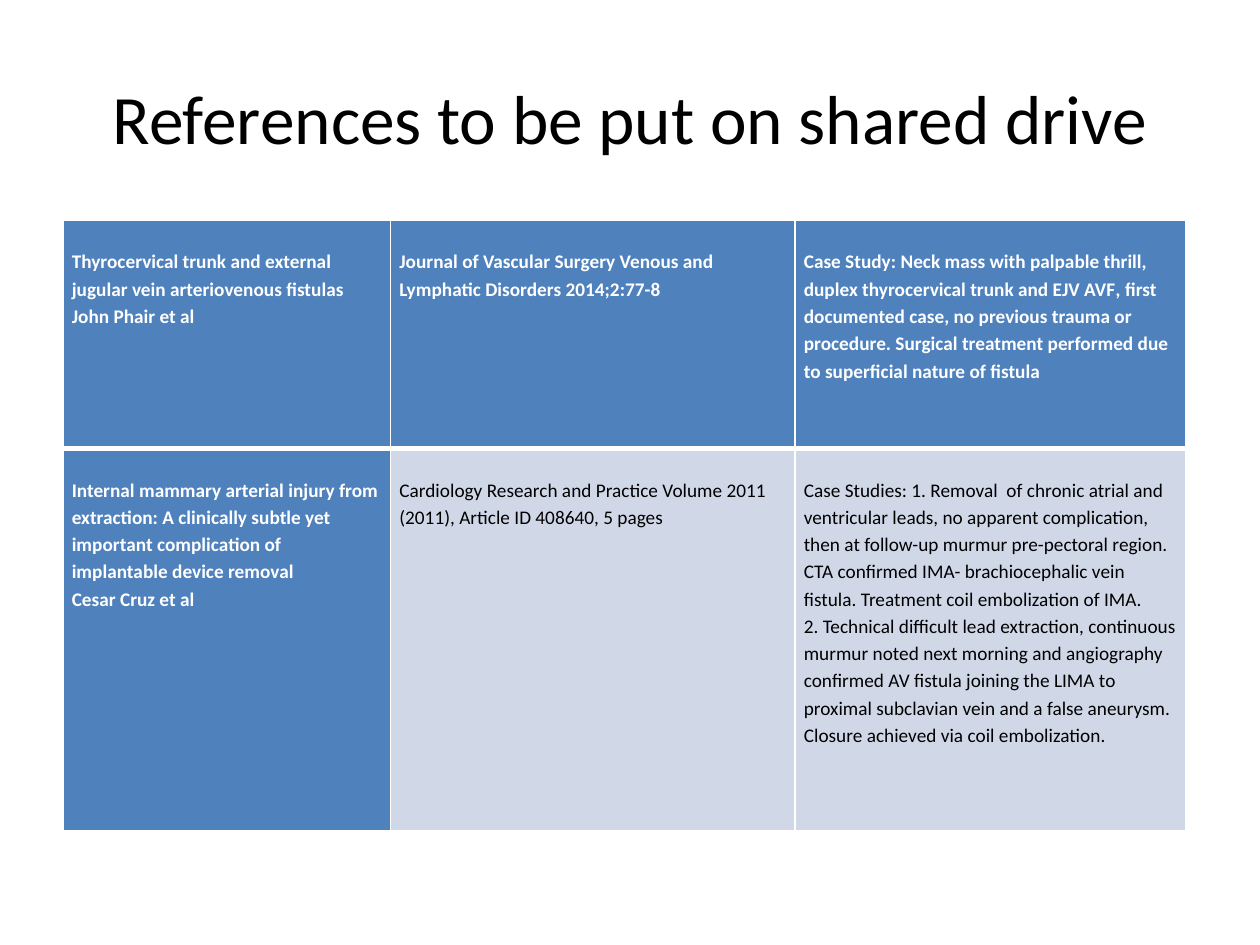
from dataclasses import dataclass

from lxml.etree import SubElement
from pptx import Presentation
from pptx.dml.color import RGBColor
from pptx.enum.text import MSO_ANCHOR, MSO_AUTO_SIZE, PP_ALIGN
from pptx.oxml.ns import qn
from pptx.util import Inches, Pt


@dataclass(frozen=True)
class Theme:
    font: str = "Calibri"
    title_size: float = 39.6
    cell_size: float = 11
    line_spacing: float = 1.15
    text: str = "000000"
    header_text: str = "FFFFFF"
    header_fill: str = "4F81BD"
    body_fill: str = "D0D8E8"
    border: str = "FFFFFF"
    thin_border: float = 1
    thick_border: float = 3


# Each cell is a list of paragraphs; a tuple holds (text, italic) runs
REFERENCES = [
    [
        ["Thyrocervical trunk and external jugular vein arteriovenous fistulas",
         "John Phair et al"],
        ["Journal of Vascular Surgery Venous and Lymphatic Disorders 2014;2:77-8"],
        [(("Case Study: Neck mass with palpable thrill, duplex thyrocervical trunk "
           "and EJV AVF", False),
          (", ", True),
          ("first documented case, no previous trauma or procedure. Surgical "
           "treatment performed due to superficial nature of fistula", False))],
    ],
    [
        ["Internal mammary arterial injury from extraction: A clinically subtle yet "
         "important complication of implantable device removal",
         "Cesar Cruz et al"],
        ["Cardiology Research and Practice Volume 2011 (2011), Article ID 408640, "
         "5 pages"],
        ["Case Studies: 1. Removal  of chronic atrial and ventricular leads, no "
         "apparent complication, then at follow-up murmur pre-pectoral region. CTA "
         "confirmed IMA- brachiocephalic vein fistula. Treatment coil embolization "
         "of IMA.",
         "2. Technical difficult lead extraction, continuous murmur noted next "
         "morning and angiography confirmed AV fistula joining the LIMA to proximal "
         "subclavian vein and a false aneurysm. Closure achieved via coil "
         "embolization."],
    ],
]


class SlideBuilder:
    def __init__(self, slide, theme):
        self.slide = slide
        self.theme = theme

    def style_run(self, run, size, color, bold=False, italic=False):
        font = run.font
        font.name, font.size = self.theme.font, Pt(size)
        font.bold, font.italic = bold, italic
        font.color.rgb = RGBColor.from_string(color)

    def add_title(self, text, left, top, width, height):
        title = self.slide.shapes.title
        title.left, title.top = Inches(left), Inches(top)
        title.width, title.height = Inches(width), Inches(height)
        text_frame = title.text_frame
        text_frame.text = text
        text_frame.auto_size = MSO_AUTO_SIZE.NONE
        text_frame.vertical_anchor = MSO_ANCHOR.MIDDLE
        paragraph = text_frame.paragraphs[0]
        paragraph.alignment = PP_ALIGN.CENTER
        self.style_run(paragraph.runs[0], self.theme.title_size, self.theme.text)

    def add_table(self, rows, left, top, column_widths, row_heights):
        table = self.slide.shapes.add_table(
            len(rows), len(column_widths), Inches(left), Inches(top),
            Inches(sum(column_widths)), Inches(sum(row_heights))).table
        table.horz_banding = False
        table.first_col = True
        for column, width in zip(table.columns, column_widths):
            column.width = Inches(width)
        for row, height in zip(table.rows, row_heights):
            row.height = Inches(height)
        for row_index, row in enumerate(rows):
            for column_index, paragraphs in enumerate(row):
                self.fill_cell(table.cell(row_index, column_index), paragraphs,
                               is_header=row_index == 0 or column_index == 0)
                self.set_borders(table.cell(row_index, column_index),
                                 above_header_rule=row_index == 0,
                                 below_header_rule=row_index == 1)

    def fill_cell(self, cell, paragraphs, is_header):
        theme = self.theme
        cell.fill.solid()
        cell.fill.fore_color.rgb = RGBColor.from_string(
            theme.header_fill if is_header else theme.body_fill)
        # The top margin leaves one line free above the text
        cell.margin_left = cell.margin_right = Inches(0.07)
        cell.margin_top, cell.margin_bottom = Inches(0.21), Inches(0)
        cell.vertical_anchor = MSO_ANCHOR.TOP
        text_frame = cell.text_frame
        for index, content in enumerate(paragraphs):
            paragraph = (text_frame.add_paragraph() if index
                         else text_frame.paragraphs[0])
            paragraph.line_spacing = theme.line_spacing
            runs = ((content, False),) if isinstance(content, str) else content
            for text, italic in runs:
                run = paragraph.add_run()
                run.text = text
                self.style_run(run, theme.cell_size,
                               theme.header_text if is_header else theme.text,
                               bold=is_header, italic=italic)

    def set_borders(self, cell, above_header_rule, below_header_rule):
        properties = cell._tc.get_or_add_tcPr()
        thick_side = ("a:lnB" if above_header_rule
                      else "a:lnT" if below_header_rule else None)
        # Border lines come before the fill in the cell properties
        for position, side in enumerate(("a:lnL", "a:lnR", "a:lnT", "a:lnB")):
            points = (self.theme.thick_border if side == thick_side
                      else self.theme.thin_border)
            line = SubElement(properties, qn(side), w=str(Pt(points)))
            fill = SubElement(line, qn("a:solidFill"))
            SubElement(fill, qn("a:srgbClr"), val=self.theme.border)
            properties.insert(position, line)


def main():
    presentation = Presentation()
    presentation.slide_width, presentation.slide_height = Inches(10), Inches(7.5)
    title_only = presentation.slide_layouts[5]
    builder = SlideBuilder(presentation.slides.add_slide(title_only), Theme())

    # Title
    builder.add_title("References to be put on shared drive", 0.5, 0.3, 9, 1.25)

    # Reference table
    builder.add_table(REFERENCES, 0.5, 1.75, column_widths=(2.6, 3.21, 3.1),
                      row_heights=(1.81, 3.03))

    presentation.save("out.pptx")


if __name__ == "__main__":
    main()
